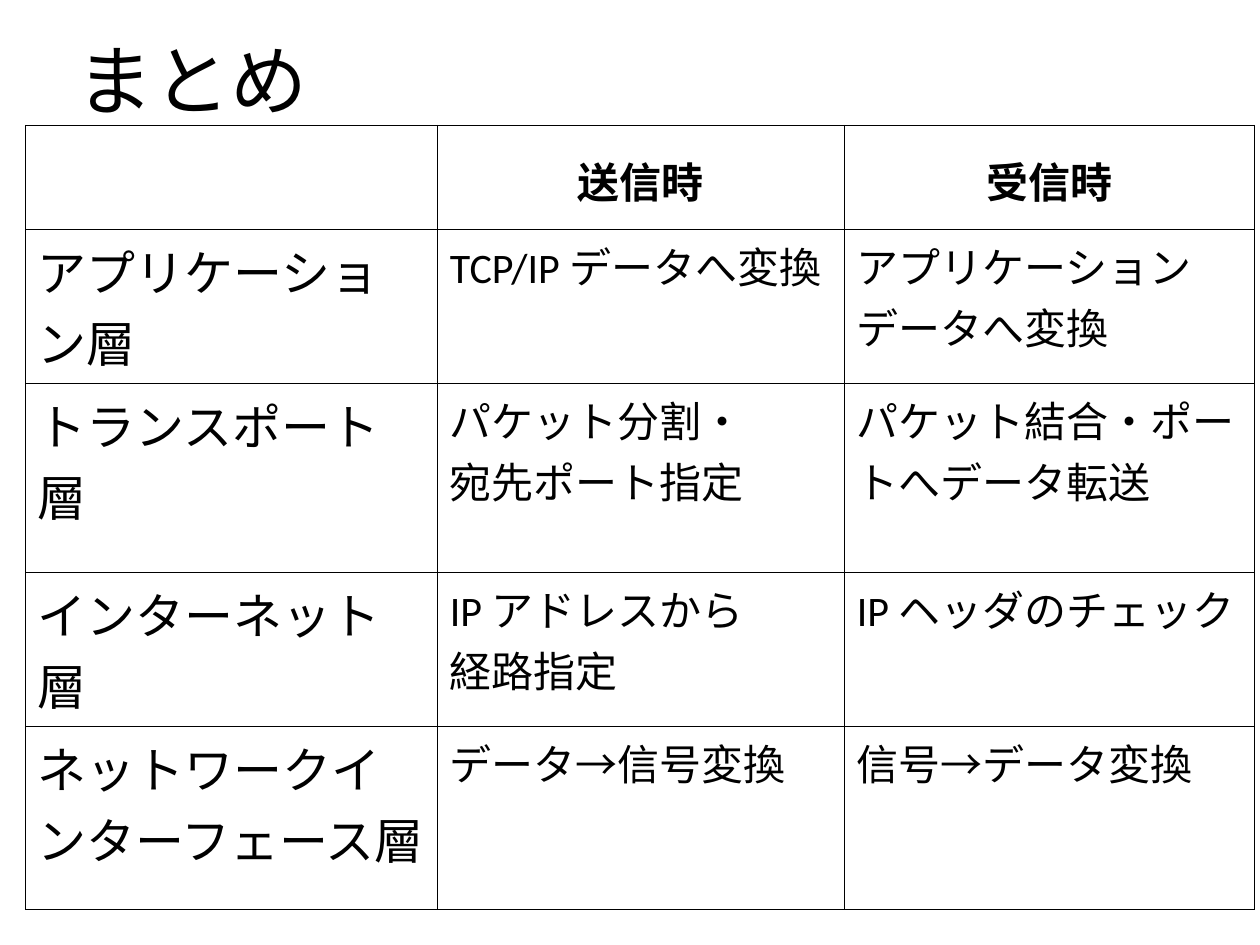
from lxml.etree import SubElement
from pptx import Presentation
from pptx.dml.color import RGBColor
from pptx.enum.text import MSO_ANCHOR as Anchor, PP_ALIGN as Align
from pptx.oxml.ns import qn
from pptx.util import Pt

TITLE = "まとめ"
ROWS = [
    ("", "送信時", "受信時"),
    ("アプリケーション層", "TCP/IP データへ変換", "アプリケーションデータへ変換"),
    ("トランスポート層", "パケット分割・\v宛先ポート指定", "パケット結合・ポートへデータ転送"),
    ("インターネット層", "IP アドレスから\v経路指定", "IP ヘッダのチェック"),
    ("ネットワークインターフェース層", "データ→信号変換", "信号→データ変換"),
]
COLUMN_WIDTHS = [235.5, 232.5, 234.5]
ROW_HEIGHTS = [59.4, 88, 108, 88, 105]
TABLE_LEFT, TABLE_TOP = 14.4, 71.4
BLACK, WHITE = "000000", "FFFFFF"
HEADER = {"size": 24, "bold": True}
LAYER = {"size": 28, "bold": False}
BODY = {"size": 24, "bold": False}


def color(value):
    return RGBColor.from_string(value)


def set_values(target, values):
    for name, value in values.items():
        setattr(target, name, value)


def write(frame, text, size, bold=False, **paragraph_format):
    paragraph = frame.paragraphs[0]
    paragraph.text = text
    set_values(paragraph, paragraph_format)
    for run in paragraph.runs:
        set_values(run.font, {"name": "Calibri", "size": Pt(size), "bold": bold})
        run.font.color.rgb = color(BLACK)


def draw_borders(cell):
    properties = cell._tc.get_or_add_tcPr()
    for index, side in enumerate(("lnL", "lnR", "lnT", "lnB")):
        line = SubElement(properties, qn(f"a:{side}"), w=str(Pt(0.25)))
        fill = SubElement(line, qn("a:solidFill"))
        SubElement(fill, qn("a:srgbClr"), val=BLACK)
        properties.remove(line)
        properties.insert(index, line)


def add_title(slide):
    box = slide.shapes.add_textbox(Pt(36.5), Pt(0), Pt(648), Pt(90))
    set_values(box.text_frame, {"word_wrap": True, "vertical_anchor": Anchor.MIDDLE})
    write(box.text_frame, TITLE, 44, alignment=Align.LEFT)


def add_layer_table(slide):
    table = slide.shapes.add_table(
        len(ROWS), len(COLUMN_WIDTHS), Pt(TABLE_LEFT), Pt(TABLE_TOP),
        Pt(sum(COLUMN_WIDTHS)), Pt(sum(ROW_HEIGHTS))).table
    set_values(table, {"first_row": False, "horz_banding": False})
    for column, width in zip(table.columns, COLUMN_WIDTHS):
        column.width = Pt(width)
    for row, height in zip(table.rows, ROW_HEIGHTS):
        row.height = Pt(height)
    for row_index, texts in enumerate(ROWS):
        for column_index, text in enumerate(texts):
            cell = table.cell(row_index, column_index)
            cell.fill.solid()
            cell.fill.fore_color.rgb = color(WHITE)
            draw_borders(cell)
            if row_index == 0:
                style, layout = HEADER, {"alignment": Align.CENTER, "line_spacing": 1.3}
            else:
                style, layout = (BODY if column_index else LAYER), {"alignment": Align.LEFT}
            write(cell.text_frame, text, **style, **layout,
                  space_before=Pt(style["size"] * 0.2))


def main():
    presentation = Presentation()
    set_values(presentation, {"slide_width": Pt(720), "slide_height": Pt(540)})
    slide = presentation.slides.add_slide(presentation.slide_layouts[6])
    add_title(slide)
    add_layer_table(slide)
    presentation.save("out.pptx")


if __name__ == "__main__":
    main()
